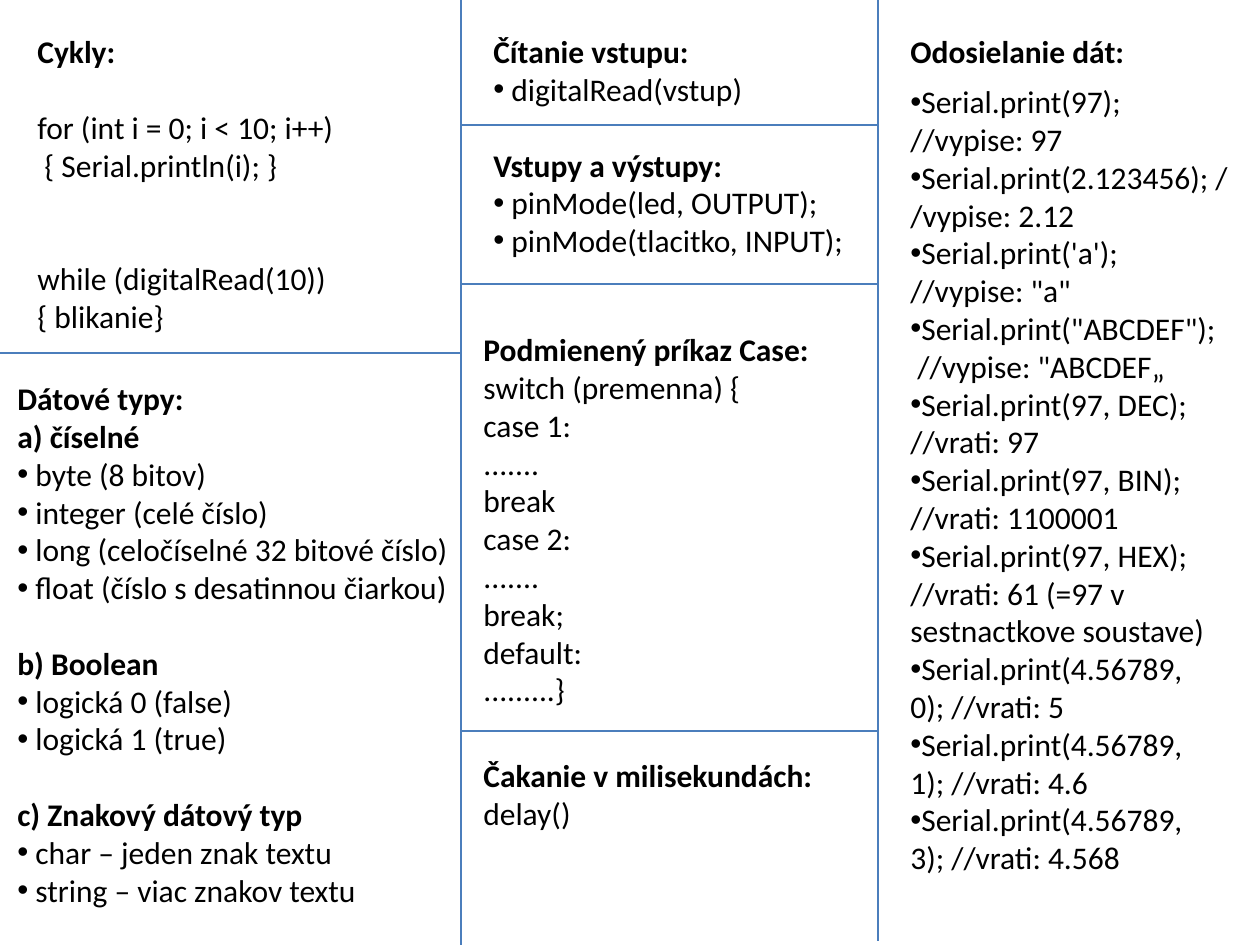
"""Build a one-page microcontroller cheat sheet in three ruled columns."""
from dataclasses import dataclass

from lxml import etree
from pptx import Presentation
from pptx import util as u
from pptx.dml.color import RGBColor
from pptx.enum import shapes, text
from pptx.oxml.ns import qn

SCALE = 914400 / 126
WIDTH, HEIGHT = 1260, 945
LEFT_RULE, RIGHT_RULE = 461, 878
FONT, SIZE, BLANK_LINE = "Calibri", 18, 21.6
INK, RULE = "000000", "4B7EBC"


@dataclass
class Line:
    """One paragraph; gap counts the empty lines above it."""
    words: str
    bold: bool = False
    bullet: bool = False
    gap: int = 0


@dataclass
class Block:
    """A text box in px."""
    left: int
    top: int
    width: int
    height: int
    lines: list[Line]
    wrap: bool = True


@dataclass
class Rule:
    """A dividing line in px."""
    x1: int
    y1: int
    x2: int
    y2: int


def px(length: int) -> u.Emu:
    """Turn px into EMU."""
    return u.Emu(round(length * SCALE))


def colour(value: str) -> RGBColor:
    """Turn a hex string into a colour."""
    return RGBColor.from_string(value)


def head(words: str, gap: int = 0) -> Line:
    """Return a bold heading."""
    return Line(words, bold=True, gap=gap)


def plain(*words: str) -> list[Line]:
    """Return unmarked lines."""
    return [Line(each) for each in words]


def items(*words: str) -> list[Line]:
    """Return bulleted lines set off by a space."""
    return [Line(f" {each}", bullet=True) for each in words]


def call(arguments: str, comment: str = "") -> Line:
    """Return a bulleted Serial.print call with its comment."""
    return Line(f"Serial.print({arguments});{comment}", bullet=True)


BLOCKS = [
    Block(25, 26, 387, 394, [
        head("Cykly:"),
        Line("for (int i = 0; i < 10; i++)", gap=1),
        Line(" { Serial.println(i); }"),
        Line("while (digitalRead(10))", gap=2),
        Line("{ blikanie}"),
    ]),
    Block(5, 373, 515, 624, [
        head("Dátové typy:"),
        head("a) číselné"),
        *items("byte (8 bitov)", "integer (celé číslo)",
               "long (celočíselné 32 bitové číslo)",
               "float (číslo s desatinnou čiarkou)"),
        head("b) Boolean", gap=1),
        *items("logická 0 (false)", "logická 1 (true)"),
        head("c) Znakový dátový typ", gap=1),
        *items("char – jeden znak textu", "string – viac znakov textu"),
    ]),
    Block(481, 26, 427, 280, [
        head("Čítanie vstupu:"),
        *items("digitalRead(vstup)"),
        head("Vstupy a výstupy:", gap=1),
        *items("pinMode(led, OUTPUT);", "pinMode(tlacitko, INPUT);"),
    ]),
    Block(471, 324, 387, 394, [
        head("Podmienený príkaz Case:"),
        *plain("switch (premenna) {", "case 1:", ".......", "break",
               "case 2:", ".......", "break;", "default:", ".........}"),
    ]),
    Block(898, 76, 353, 814, [
        call("97"),
        *plain("//vypise: 97"),
        call("2.123456", " //vypise: 2.12"),
        call("'a'"),
        *plain('//vypise: "a"'),
        call('"ABCDEF"'),
        *plain(' //vypise: "ABCDEF„'),
        call("97, DEC", " //vrati: 97"),
        call("97, BIN", " //vrati: 1100001"),
        call("97, HEX", " //vrati: 61 (=97 v sestnactkove soustave)"),
        call("4.56789, 0", " //vrati: 5"),
        call("4.56789, 1", " //vrati: 4.6"),
        call("4.56789, 3", " //vrati: 4.568"),
    ]),
    Block(898, 26, 241, 50, [head("Odosielanie dát:")], wrap=False),
    Block(471, 750, 367, 89, [head("Čakanie v milisekundách:"), *plain("delay()")]),
]

RULES = [
    Rule(LEFT_RULE, 0, LEFT_RULE, HEIGHT),
    Rule(RIGHT_RULE, -4, RIGHT_RULE, HEIGHT - 4),
    Rule(0, 353, LEFT_RULE, 353),
    *(Rule(LEFT_RULE, y, RIGHT_RULE, y) for y in (125, 284, 731)),
]


def write(para, words: str, *, bold: bool = False, bullet: bool = False, gap: int = 0) -> None:
    """Fill a paragraph with formatted text."""
    para.space_before = u.Pt(gap * BLANK_LINE)
    span = para.add_run()
    span.text = words
    span.font.name, span.font.size, span.font.bold = FONT, u.Pt(SIZE), bold
    span.font.color.rgb = colour(INK)
    if bullet:
        properties = para._p.get_or_add_pPr()
        etree.SubElement(properties, qn("a:buFont")).set("typeface", "Arial")
        etree.SubElement(properties, qn("a:buChar")).set("char", "•")


def draw_block(page, block: Block) -> None:
    """Draw a text box with all its lines."""
    box = page.shapes.add_textbox(px(block.left), px(block.top), px(block.width), px(block.height))
    frame = box.text_frame
    frame.word_wrap = block.wrap
    frame.auto_size = text.MSO_AUTO_SIZE.SHAPE_TO_FIT_TEXT
    for index, line in enumerate(block.lines):
        para = frame.add_paragraph() if index else frame.paragraphs[0]
        write(para, line.words, bold=line.bold, bullet=line.bullet, gap=line.gap)


def draw_rule(page, rule: Rule) -> None:
    """Draw a thin dividing line without a shadow."""
    line = page.shapes.add_connector(
        shapes.MSO_CONNECTOR.STRAIGHT, px(rule.x1), px(rule.y1), px(rule.x2), px(rule.y2))
    line.line.color.rgb = colour(RULE)
    line.line.width = u.Pt(0.75)
    etree.SubElement(line._element.spPr, qn("a:effectLst"))


def main() -> None:
    """Build and save the deck."""
    deck = Presentation()
    deck.slide_width, deck.slide_height = px(WIDTH), px(HEIGHT)
    page = deck.slides.add_slide(deck.slide_layouts[6])
    for rule in RULES:
        draw_rule(page, rule)
    for block in BLOCKS:
        draw_block(page, block)
    deck.save("out.pptx")


if __name__ == "__main__":
    main()
